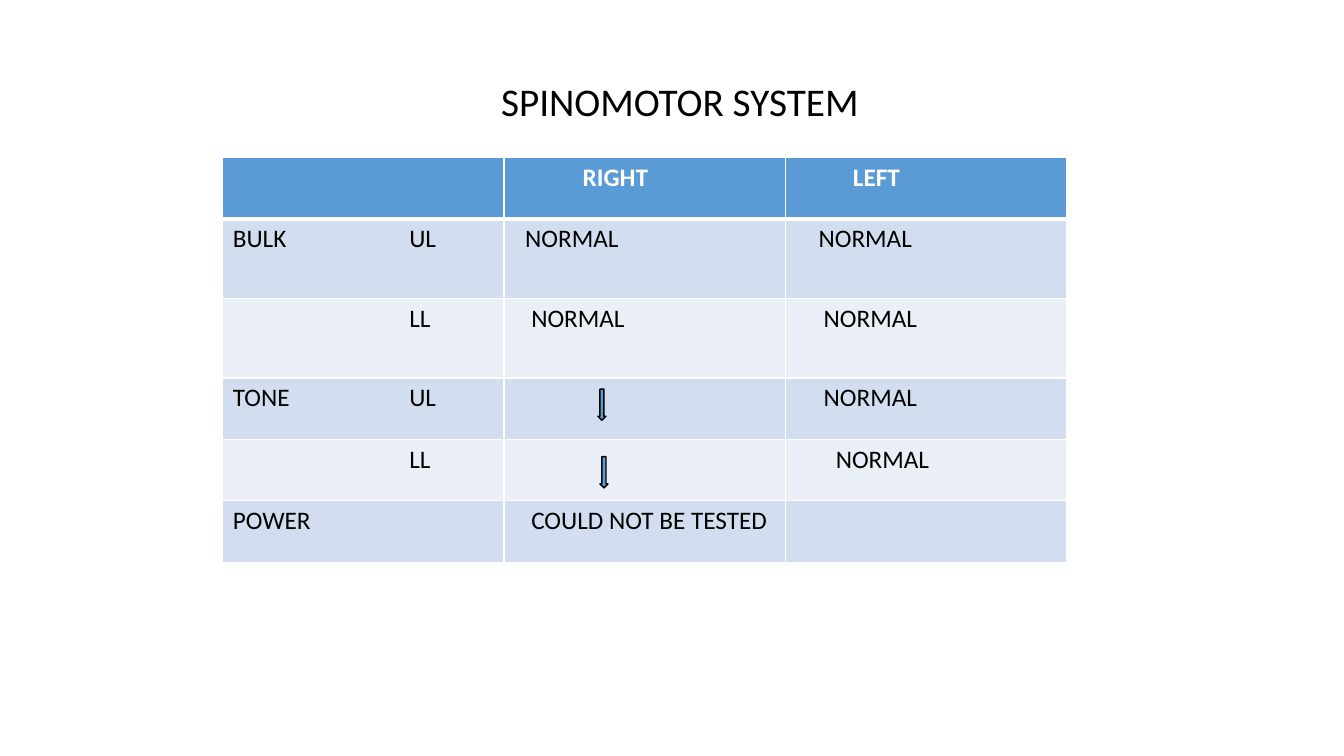
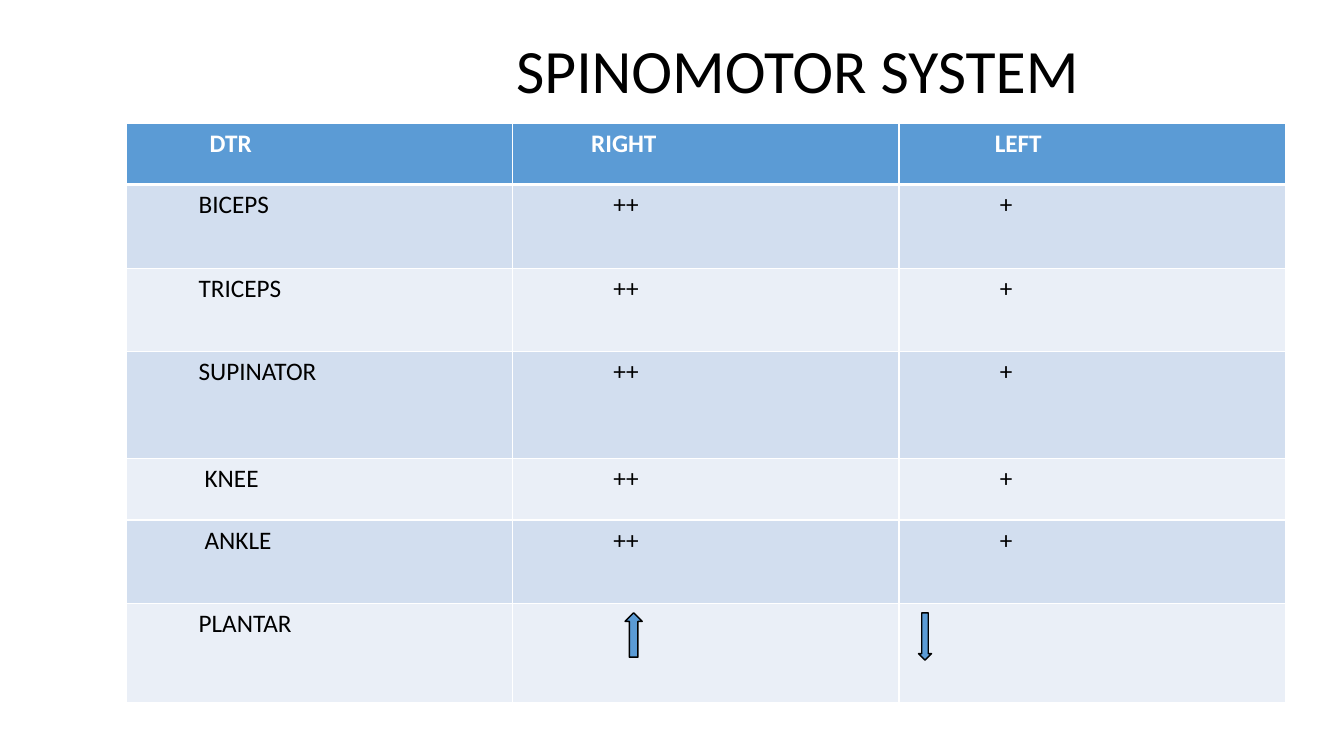
from dataclasses import dataclass

from lxml import etree
from pptx import Presentation
from pptx import util as u
from pptx.dml.color import RGBColor
from pptx.enum import shapes, text
from pptx.oxml.ns import qn


@dataclass(frozen=True)
class Theme:
    font: str = "Calibri"
    ink: str = "000000"
    white: str = "FFFFFF"
    accent: str = "5B9BD5"
    bands: tuple = ("D2DEEF", "EAEFF7")
    body: int = 18
    small_title: int = 28
    large_title: int = 44
    rule: int = 1
    header_rule: int = 3
    cell_margin: float = 0.1


T = Theme()
TITLE = "SPINOMOTOR SYSTEM"
EMPTY = ("", 0)


def rgb(value):
    return RGBColor.from_string(value)


def add_run(p, words, size, color, bold=False):
    r = p.add_run()
    r.text = words
    r.font.name = T.font
    r.font.size = u.Pt(size)
    r.font.bold = bold
    r.font.color.rgb = rgb(color)


def add_title(s, box, size, indent):
    sp = s.shapes.title
    sp.left, sp.top, sp.width, sp.height = map(u.Inches, box)
    tf = sp.text_frame
    tf.auto_size = text.MSO_AUTO_SIZE.NONE
    tf.vertical_anchor = text.MSO_ANCHOR.MIDDLE
    tf.margin_left = u.Inches(T.cell_margin + indent)
    p = tf.paragraphs[0]
    p.alignment = text.PP_ALIGN.LEFT
    p.line_spacing = 0.9
    add_run(p, TITLE, size, T.ink)


def add_border(cell, side, width):
    tcPr = cell._tc.get_or_add_tcPr()
    ln = etree.SubElement(tcPr, qn(f"a:ln{side}"), w=str(u.Pt(width)))
    fill = etree.SubElement(ln, qn("a:solidFill"))
    etree.SubElement(fill, qn("a:srgbClr"), val=T.white)


def add_tab_stop(p, position):
    tabs = etree.SubElement(p._p.get_or_add_pPr(), qn("a:tabLst"))
    etree.SubElement(tabs, qn("a:tab"), pos=str(u.Inches(position)), algn="l")


def fill_cell(cell, row, words, indent, tab):
    header = row == 0
    top = T.header_rule if row == 1 else T.rule
    bottom = T.header_rule if header else T.rule
    for side, width in zip("LRTB", (T.rule, T.rule, top, bottom)):
        add_border(cell, side, width)
    cell.fill.solid()
    cell.fill.fore_color.rgb = rgb(T.accent if header else T.bands[(row - 1) % 2])
    cell.margin_left = u.Inches(T.cell_margin + indent)
    p = cell.text_frame.paragraphs[0]
    p.font.size = u.Pt(T.body)
    if "\t" in words:
        add_tab_stop(p, tab)
    if words:
        add_run(p, words, T.body, T.white if header else T.ink, header)


def add_grid(s, left, top, width, heights, rows, tab=0):
    columns = len(rows[0])
    frame = s.shapes.add_table(len(rows), columns, u.Inches(left), u.Inches(top),
                               u.Inches(width), u.Inches(sum(heights)))
    table = frame.table
    table.horz_banding = False
    for column in table.columns:
        column.width = u.Inches(width / columns)
    for i, (height, row) in enumerate(zip(heights, rows)):
        table.rows[i].height = u.Inches(height)
        for j, (words, indent) in enumerate(row):
            fill_cell(table.cell(i, j), i, words, indent, tab)


def add_arrow(s, kind, box):
    sp = s.shapes.add_shape(kind, *map(u.Inches, box))
    sp.shadow.inherit = False
    sp.fill.solid()
    sp.fill.fore_color.rgb = rgb(T.accent)
    sp.line.color.rgb = rgb(T.ink)
    sp.line.width = u.Pt(T.rule)


def build_tone_slide(s):
    add_title(s, (3.64, 0.75, 9.69, 0.55), T.small_title, 1.23)
    rows = [
        [EMPTY, ("RIGHT", 0.68), ("LEFT", 0.57)],
        [("BULK\tUL", 0), ("NORMAL", 0.11), ("NORMAL", 0.23)],
        [("\tLL", 0), ("NORMAL", 0.17), ("NORMAL", 0.28)],
        [("TONE\tUL", 0), EMPTY, ("NORMAL", 0.28)],
        [("\tLL", 0), EMPTY, ("NORMAL", 0.4)],
        [("POWER", 0), ("COULD NOT BE TESTED", 0.17), EMPTY],
    ]
    add_grid(s, 2.21, 1.56, 8.37, (0.61, 0.79, 0.79, 0.61, 0.61, 0.61), rows, tab=1.75)
    for left, top in ((5.93, 3.86), (5.95, 4.53)):
        add_arrow(s, shapes.MSO_SHAPE.DOWN_ARROW, (left, top, 0.08, 0.31))


def build_reflex_slide(s):
    add_title(s, (3.36, 0, 9.97, 1.45), T.large_title, 1.66)
    reflexes = (("BICEPS", 0.62), ("TRICEPS", 0.62), ("SUPINATOR", 0.62),
                ("KNEE", 0.68), ("ANKLE", 0.68))
    rows = [
        [("DTR", 0.73), ("RIGHT", 0.68), ("LEFT", 0.85)],
        *([reflex, ("++", 0.9), ("+", 0.9)] for reflex in reflexes),
        [("PLANTAR", 0.62), EMPTY, EMPTY],
    ]
    add_grid(s, 1.25, 1.22, 11.5, (0.61, 0.83, 0.83, 1.06, 0.61, 0.83, 0.98), rows)
    add_arrow(s, shapes.MSO_SHAPE.DOWN_ARROW, (9.11, 6.08, 0.13, 0.47))
    add_arrow(s, shapes.MSO_SHAPE.UP_ARROW, (6.2, 6.08, 0.17, 0.44))


def main():
    prs = Presentation()
    prs.slide_width, prs.slide_height = u.Inches(13.33), u.Inches(7.5)
    title_only = prs.slide_layouts[5]
    for build in (build_tone_slide, build_reflex_slide):
        build(prs.slides.add_slide(title_only))
    prs.save("out.pptx")


if __name__ == "__main__":
    main()
